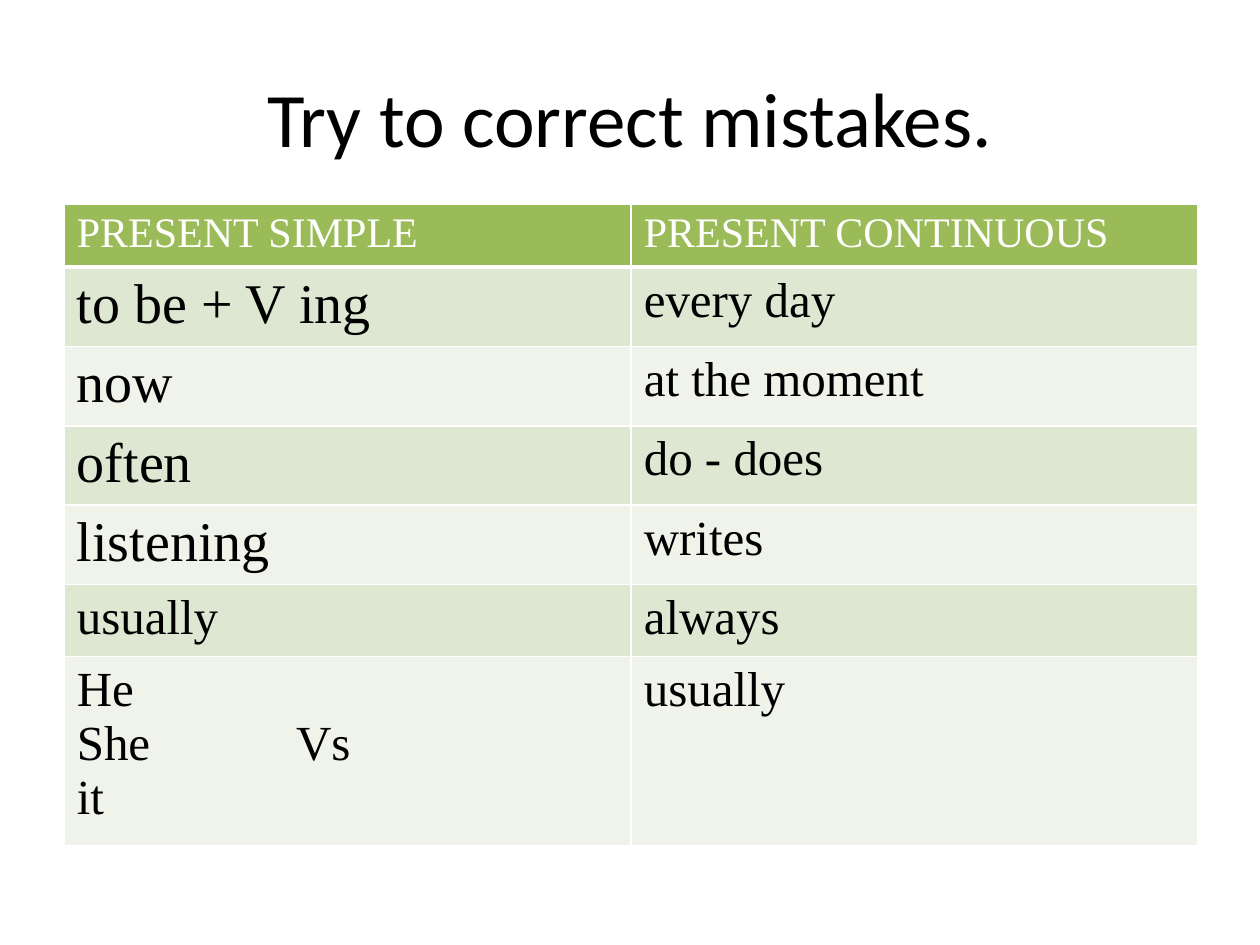
from dataclasses import dataclass

from lxml.etree import SubElement
from pptx import Presentation
from pptx.dml.color import RGBColor
from pptx.enum.text import MSO_ANCHOR, PP_ALIGN
from pptx.oxml import parse_xml
from pptx.oxml.ns import nsdecls, qn
from pptx.util import Inches, Pt


@dataclass(frozen=True)
class Theme:
    title_font: str = "Calibri"
    table_font: str = "Times New Roman"
    text: str = "000000"
    white: str = "FFFFFF"
    header: str = "9BBB59"
    bands: tuple = ("DEE7D1", "EFF3EA")
    title_size: int = 44
    header_size: int = 24
    large_size: int = 32
    body_size: int = 28


THEME = Theme()
ROWS = [
    ("PRESENT SIMPLE", "PRESENT CONTINUOUS"),
    ("to be + V ing", "every day"),
    ("now", "at the moment"),
    ("often", "do - does"),
    ("listening", "writes"),
    ("usually", "always"),
    ("He\nShe\tVs\nit", "usually"),
]
ROW_HEIGHTS = [0.5] + [0.63] * 4 + [0.57, 1.5]
LARGE_ROWS = range(1, 5)
VERB_TAB = Inches(1.74)


def style_font(font, name, size, color):
    font.name, font.size, font.bold = name, Pt(size), False
    font.color.rgb = RGBColor.from_string(color)


def add_title(slide, text, left, top, width, height):
    sp = slide.shapes.title
    sp.left, sp.top, sp.width, sp.height = left, top, width, height
    tf = sp.text_frame
    tf.text = text
    tf.word_wrap = True
    tf.vertical_anchor = MSO_ANCHOR.MIDDLE
    p = tf.paragraphs[0]
    p.alignment = PP_ALIGN.CENTER
    style_font(p.font, THEME.title_font, THEME.title_size, THEME.text)


def set_borders(cell, bottom):
    """Draw white edges, 1 pt wide except for the bottom one."""
    widths = {"lnL": 1, "lnR": 1, "lnT": 1, "lnB": bottom}
    tc_pr = cell._tc.get_or_add_tcPr()
    for i, (tag, width) in enumerate(widths.items()):
        tc_pr.insert(i, parse_xml(
            f'<a:{tag} {nsdecls("a")} w="{Pt(width)}"><a:solidFill>'
            f'<a:srgbClr val="{THEME.white}"/></a:solidFill></a:{tag}>'))


def add_tab_stop(p, position):
    p_pr = p._p.get_or_add_pPr()
    tabs = SubElement(p_pr, qn("a:tabLst"))
    SubElement(tabs, qn("a:tab"), pos=str(position), algn="l")


def fill_cell(cell, text, size, color, fill, bottom=1):
    cell.fill.solid()
    cell.fill.fore_color.rgb = RGBColor.from_string(fill)
    set_borders(cell, bottom)
    cell.text_frame.text = text
    for p in cell.text_frame.paragraphs:
        if "\t" in p.text:
            add_tab_stop(p, VERB_TAB)
        style_font(p.font, THEME.table_font, size, color)


def add_tense_table(slide, left, top, width, height):
    table = slide.shapes.add_table(
        len(ROWS), len(ROWS[0]), left, top, width, height).table
    for row, row_height in zip(table.rows, ROW_HEIGHTS):
        row.height = Inches(row_height)
    for r, texts in enumerate(ROWS):
        for c, text in enumerate(texts):
            cell = table.cell(r, c)
            if r == 0:
                fill_cell(cell, text, THEME.header_size, THEME.white,
                          THEME.header, bottom=3)
            else:
                large = c == 0 and r in LARGE_ROWS
                size = THEME.large_size if large else THEME.body_size
                fill_cell(cell, text, size, THEME.text,
                          THEME.bands[(r - 1) % 2])


def main():
    prs = Presentation()
    prs.slide_width, prs.slide_height = Inches(10), Inches(7.5)
    slide = prs.slides.add_slide(prs.slide_layouts[5])
    add_title(slide, "Try to correct mistakes.",
              Inches(0.5), Inches(0.3), Inches(9), Inches(1.25))
    add_tense_table(slide, Inches(0.51), Inches(1.62),
                    Inches(9), Inches(sum(ROW_HEIGHTS)))
    prs.save("out.pptx")


if __name__ == "__main__":
    main()
